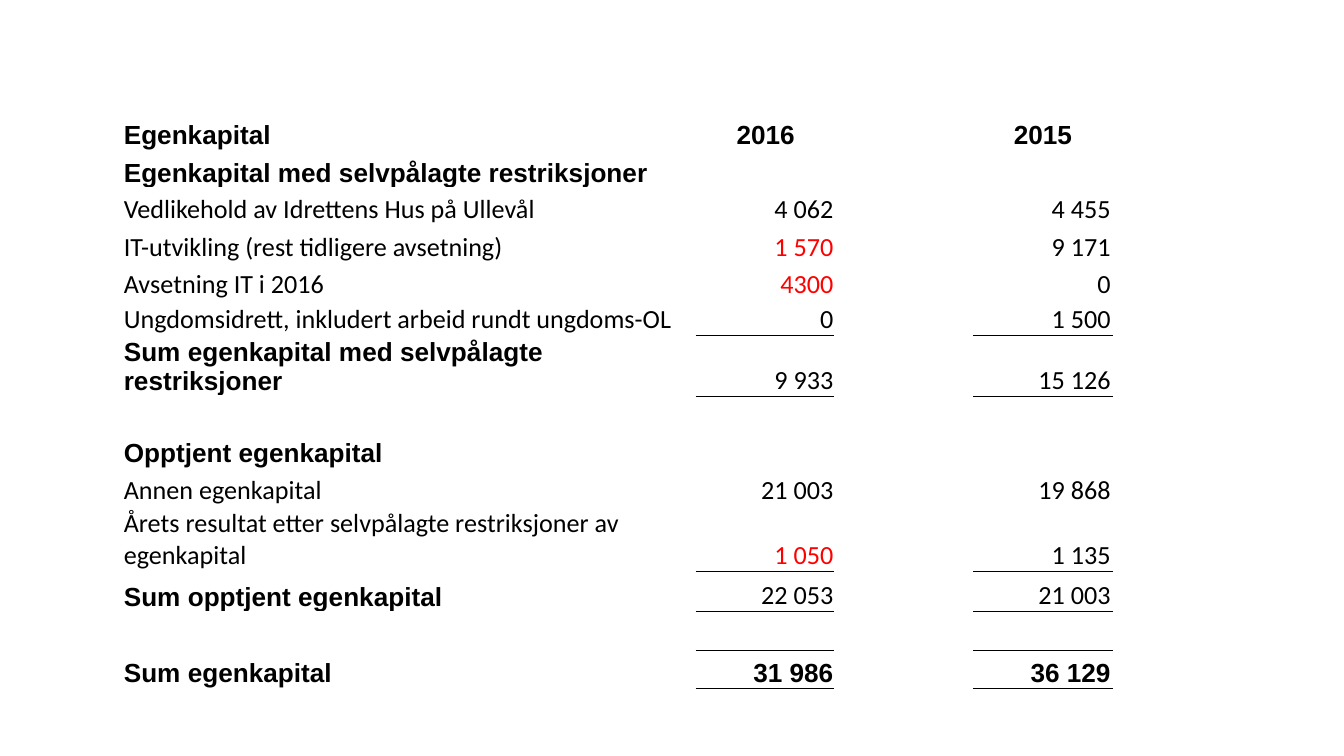
from lxml.etree import SubElement
from pptx import Presentation
from pptx.dml.color import RGBColor
from pptx.enum.text import MSO_ANCHOR, PP_ALIGN
from pptx.oxml.ns import qn
from pptx.util import Cm, Pt

BLACK = RGBColor(0, 0, 0)
RED = RGBColor(255, 0, 0)

CELL_FORMAT = {
    "margin_left": Cm(0.03),
    "margin_right": Cm(0.03),
    "margin_top": Cm(0.03),
    "margin_bottom": Cm(0),
    "vertical_anchor": MSO_ANCHOR.BOTTOM,
}
HEADING = {"name": "Arial", "bold": True, "size": Pt(14)}
BODY = {"name": "Calibri", "bold": False, "size": Pt(14)}

# Label, 2016, 2015, label format, number format, height in cm, ruled below
ROWS = [
    ("Egenkapital", "2016", "2015", HEADING, HEADING, 0.71, False),
    ("Egenkapital med selvpålagte restriksjoner", "", "", HEADING, BODY, 0.71, False),
    ("Vedlikehold av Idrettens Hus på Ullevål", "4 062", "4 455", BODY, BODY, 0.71, False),
    ("IT-utvikling (rest tidligere avsetning)", "1 570", "9 171", BODY, BODY, 0.71, False),
    ("Avsetning IT i 2016", "4300", "0", BODY, BODY, 0.71, False),
    ("Ungdomsidrett, inkludert arbeid rundt ungdoms-OL", "0", "1 500", BODY, BODY, 0.66, True),
    ("Sum egenkapital med selvpålagte restriksjoner", "9 933", "15 126", HEADING, BODY, 0.74, True),
    ("", "", "", BODY, BODY, 0.66, False),
    ("Opptjent egenkapital", "", "", HEADING, BODY, 0.71, False),
    ("Annen egenkapital", "21 003", "19 868", BODY, BODY, 0.71, False),
    ("Årets resultat etter selvpålagte restriksjoner av egenkapital", "1 050", "1 135",
     BODY, BODY, 0.74, True),
    ("Sum opptjent egenkapital", "22 053", "21 003", HEADING, BODY, 0.76, True),
    ("", "", "", BODY, BODY, 0.74, True),
    ("Sum egenkapital", "31 986", "36 129", HEADING, HEADING, 0.71, True),
]
RED_NUMBERS = {"1 570", "4300", "1 050"}
COLUMN_WIDTHS = [10.85, 2.62, 2.62, 2.62]


def add_border(cell, tag):
    line = SubElement(cell._tc.get_or_add_tcPr(), qn(tag), w=str(Pt(0.5)))
    fill = SubElement(line, qn("a:solidFill"))
    SubElement(fill, qn("a:srgbClr"), val=str(BLACK))


def write_cell(cell, text, font_format, alignment):
    para = cell.text_frame.paragraphs[0]
    if not text:
        # Keep empty rows as low as the text rows
        SubElement(para._p, qn("a:endParaRPr"), sz="1400")
        return
    para.alignment = alignment
    span = para.add_run()
    span.text = text
    for name, value in font_format.items():
        setattr(span.font, name, value)
    span.font.color.rgb = RED if text in RED_NUMBERS else BLACK


deck = Presentation()
deck.slide_width = Cm(25.4)
deck.slide_height = Cm(14.28)
page = deck.slides.add_slide(deck.slide_layouts[6])

# Equity table
table = page.shapes.add_table(
    len(ROWS), len(COLUMN_WIDTHS), Cm(2.31), Cm(2.13),
    Cm(sum(COLUMN_WIDTHS)), Cm(sum(row[5] for row in ROWS)),
).table
table.first_row = False
table.horz_banding = False
for column, width in zip(table.columns, COLUMN_WIDTHS):
    column.width = Cm(width)

ruled_above = False
for index, row in enumerate(ROWS):
    label, current, previous, label_format, number_format, height, ruled_below = row
    table.rows[index].height = Cm(height)
    number_alignment = PP_ALIGN.CENTER if index == 0 else PP_ALIGN.RIGHT

    for position, text in enumerate((label, current, "", previous)):
        cell = table.cell(index, position)
        for name, value in CELL_FORMAT.items():
            setattr(cell, name, value)
        if position == 0:
            write_cell(cell, text, label_format, PP_ALIGN.LEFT)
        else:
            write_cell(cell, text, number_format, number_alignment)

        # Rules above and below the number columns
        if position in (1, 3):
            if ruled_above:
                add_border(cell, "a:lnT")
            if ruled_below:
                add_border(cell, "a:lnB")
        cell.fill.background()
    ruled_above = ruled_below

deck.save("out.pptx")
